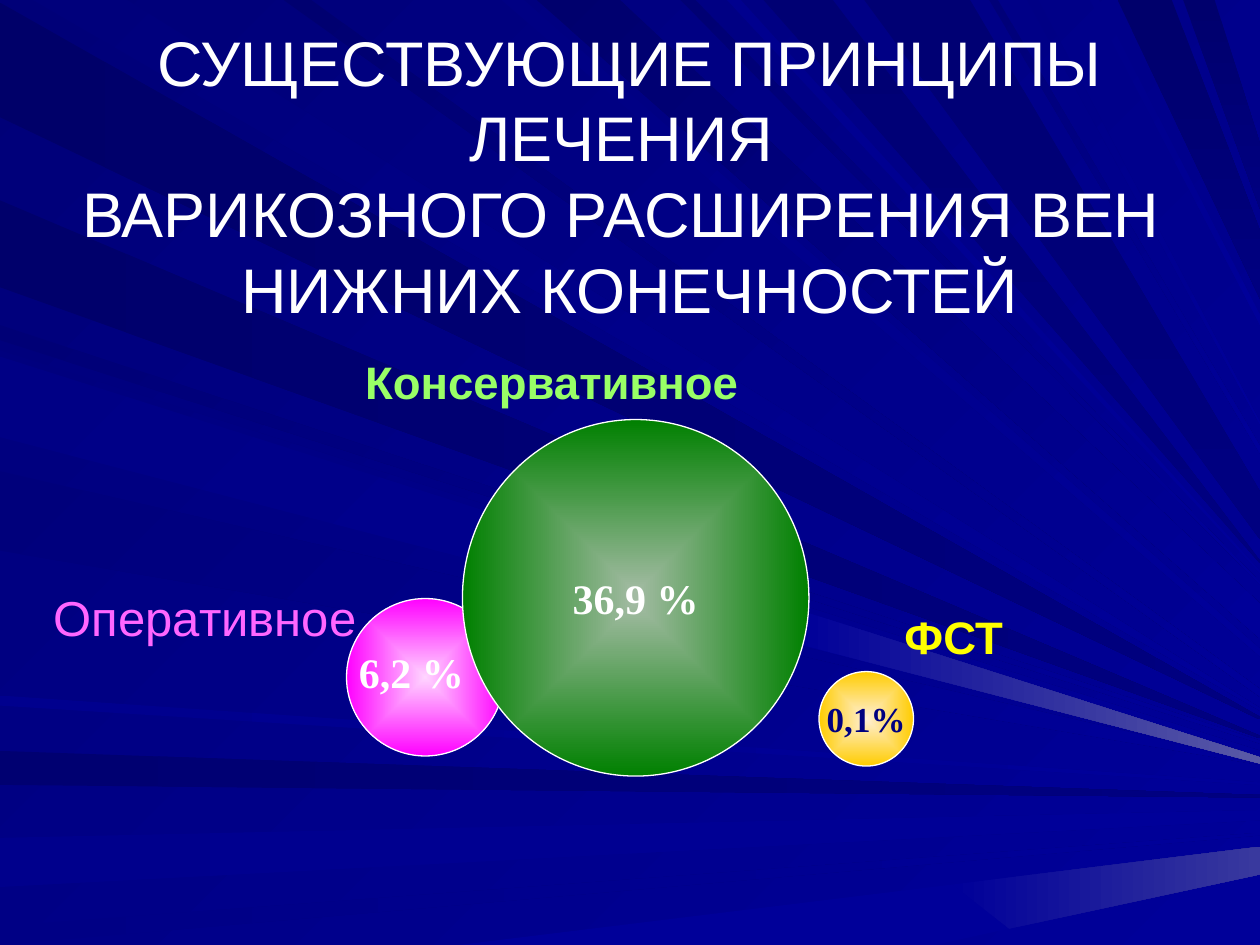
from lxml import etree
from pptx import Presentation
from pptx.dml.color import RGBColor
from pptx.enum.shapes import MSO_SHAPE
from pptx.enum.text import MSO_ANCHOR, PP_ALIGN
from pptx.oxml.ns import qn
from pptx.util import Emu, Pt

PX = 9144  # 100 px to the inch
WIDTH, HEIGHT = 1000, 750
CENTER, LEFT = PP_ALIGN.CENTER, PP_ALIGN.LEFT
MIDDLE, TOP = MSO_ANCHOR.MIDDLE, MSO_ANCHOR.TOP
SANS, SERIF = "Arial", "Times New Roman"

COLOURS = {
    "b69": "000069", "b6B": "00006B", "b6D": "00006D", "b70": "000070",
    "b71": "000071", "b73": "000073", "b76": "000076", "b78": "000078",
    "b7B": "00007B", "b7E": "00007E", "b80": "000080", "b83": "000083",
    "b85": "000085", "b8A": "00008A", "b8C": "00008C", "b8E": "00008E",
    "b99": "000099", "haze1": "39399E", "haze3": "5A5AA6", "white": "FFFFFF",
    "pink": "FF66FF", "pink core": "FFD5FF", "magenta": "FF00FF",
    "lime": "99FF66", "green core": "A3BBA3", "green": "008000",
    "yellow": "FFFF00", "gold core": "FFEFD5", "gold": "FFCC00",
}

# edge it leaves, start and end on that edge, height of its tip on the right
# side, colours, half width of a blunt tip; back to front
RAYS = [
    ("left", 2, 93, 570, "b69", "b80"),
    ("top", 26, 101, 563, "b7B", "b99"),
    ("left", 596, 623, 632, "b71", "b80"),
    ("left", 665, 704, 647, "b8C", "b99", 4),
    ("left", 735, 750, 662, "b85", "b99"),
    ("left", 258, 270, 589, "b76", "b99"),
    ("left", 159, 228, 585, "b6B", "b80"),
    ("top", 398, 416, 518, "b83", "b99", 3),
    ("top", 426, 492, 493, "b6D", "b99", 14),
    ("top", 540, 552, 463, "b73", "b99"),
    ("top", 606, 661, 446, "b73", "b80"),
    ("top", 887, 930, 210, "b6B", "b80", 27),
    ("top", 939, 964, 140, "b6D", "b80", 26),
    ("left", 278, 342, 599, "b7E", "b99", 3),
    ("left", 374, 437, 606, "b7B", "b99"),
    ("left", 552, 560, 622, "b8E", "b99"),
    ("top", 225, 247, 550, "b70", "b99", 3),
    ("top", 577, 588, 454, "b8E", "b99"),
    ("top", 686, 770, 409, "b73", "b80", 19),
    ("top", 785, 792, 357, "b78", "b99", 3),
    ("top", 815, 824, 336, "b85", "b99"),
    ("top", 865, 872, 254, "b8A", "b99", 4),
    ("left", 283, 347, 604, "b85", "b99", 3),
]

# corners, colours
GLOWS = [
    ([(364, 750), (756, 702), (801, 737), (742, 750)], "b99", "b99"),
    ([(756, 702), (1000, 672), (1000, 694), (801, 737)], "b99", "haze1"),
    ([(637, 485), (1000, 601), (1000, 606), (633, 511)], "b99", "haze3"),
]

TITLE = ("СУЩЕСТВУЮЩИЕ ПРИНЦИПЫ ЛЕЧЕНИЯ \vВАРИКОЗНОГО РАСШИРЕНИЯ ВЕН \v"
         "НИЖНИХ КОНЕЧНОСТЕЙ")

# box, core colour, rim colour, share text, text size, text colour
BUBBLES = [
    ((275, 475, 125, 125), "pink core", "magenta", "", 24, "white"),
    ((367, 333, 275, 283), "green core", "green", "36,9 %", 24, "white"),
    ((650, 533, 75, 75), "gold core", "gold", "0,1%", 20, "b80"),
]

# text, box, font, size, colour, bold, alignment, anchor, line spacing
LABELS = [
    (TITLE, (0, 76, 1000, 125), SANS, 36, "white", False, CENTER, MIDDLE, 1.0),
    ("Оперативное", (33, 467, 317, 50), SANS, 28, "pink", False, LEFT, TOP, 0.9),
    ("Консервативное", (280, 281, 350, 50), SANS, 26, "lime", True, LEFT, TOP, 0.9),
    ("ФСТ", (708, 483, 142, 42), SANS, 26, "yellow", True, LEFT, TOP, 0.9),
    ("6,2 %", (275, 508, 117, 50), SERIF, 24, "white", True, LEFT, TOP, 1.0),
]


def rgb(name):
    return RGBColor.from_string(COLOURS[name])


def emu(box):
    return [Emu(length * PX) for length in box]


def shade(fill, start, end, angle):
    """Fill with one colour, or a gradient running clockwise from the x axis."""
    if start == end:
        fill.solid()
        fill.fore_color.rgb = rgb(start)
        return
    fill.gradient()
    fill.gradient_angle = -angle % 360
    for stop, name in zip(fill.gradient_stops, (start, end)):
        stop.color.rgb = rgb(name)


def radiate(shape):
    """Turn a linear gradient into one that spreads from the middle."""
    gradient = shape._element.spPr.find(qn("a:gradFill"))
    gradient.remove(gradient.find(qn("a:lin")))
    spread = etree.SubElement(gradient, qn("a:path"), path="shape")
    etree.SubElement(spread, qn("a:fillToRect"),
                     {side: "50000" for side in "ltrb"})


def write(frame, text, font, size, colour, bold, align, anchor, spacing=1.0):
    frame.vertical_anchor = anchor
    frame.text = text
    paragraph = frame.paragraphs[0]
    paragraph.alignment = align
    paragraph.line_spacing = spacing
    paragraph.font.name = font
    paragraph.font.size = Pt(size)
    paragraph.font.bold = bold
    paragraph.font.color.rgb = rgb(colour)


def add_glow(slide, corners, start, end, angle=0):
    builder = slide.shapes.build_freeform(*corners[0], scale=PX)
    builder.add_line_segments(corners[1:], close=True)
    glow = builder.convert_to_shape()
    glow.shadow.inherit = False
    glow.line.fill.background()
    shade(glow.fill, start, end, angle)


def add_ray(slide, edge, near, far, tip, start, end, spread=1):
    upper, lower = (WIDTH, tip - spread), (WIDTH, tip + spread)
    if edge == "top":
        corners = [(near, 0), (far, 0), upper, lower]
        angle = 90 if end == "b80" else 45
    else:
        corners = [(0, far), (0, near), upper, lower]
        angle = 45 if end == "b99" and tip - near > 100 else 0
    add_glow(slide, corners, start, end, angle)


def add_bubble(slide, box, core, rim, share, size, colour):
    bubble = slide.shapes.add_shape(MSO_SHAPE.OVAL, *emu(box))
    bubble.shadow.inherit = False
    shade(bubble.fill, core, rim, 0)
    radiate(bubble)
    bubble.line.color.rgb = rgb("white")
    bubble.line.width = Pt(0.75)
    if share:
        bubble.text_frame.word_wrap = False
        write(bubble.text_frame, share, SERIF, size, colour, True, CENTER, MIDDLE)


def add_label(slide, text, box, *style):
    frame = slide.shapes.add_textbox(*emu(box)).text_frame
    frame.word_wrap = True
    write(frame, text, *style)


def main():
    deck = Presentation()
    deck.slide_width, deck.slide_height = emu((WIDTH, HEIGHT))
    slide = deck.slides.add_slide(deck.slide_layouts[6])
    shade(slide.background.fill, "b78", "b99", 45)
    for add, parts in ((add_ray, RAYS), (add_glow, GLOWS),
                       (add_bubble, BUBBLES), (add_label, LABELS)):
        for part in parts:
            add(slide, *part)
    deck.save("out.pptx")


if __name__ == "__main__":
    main()
